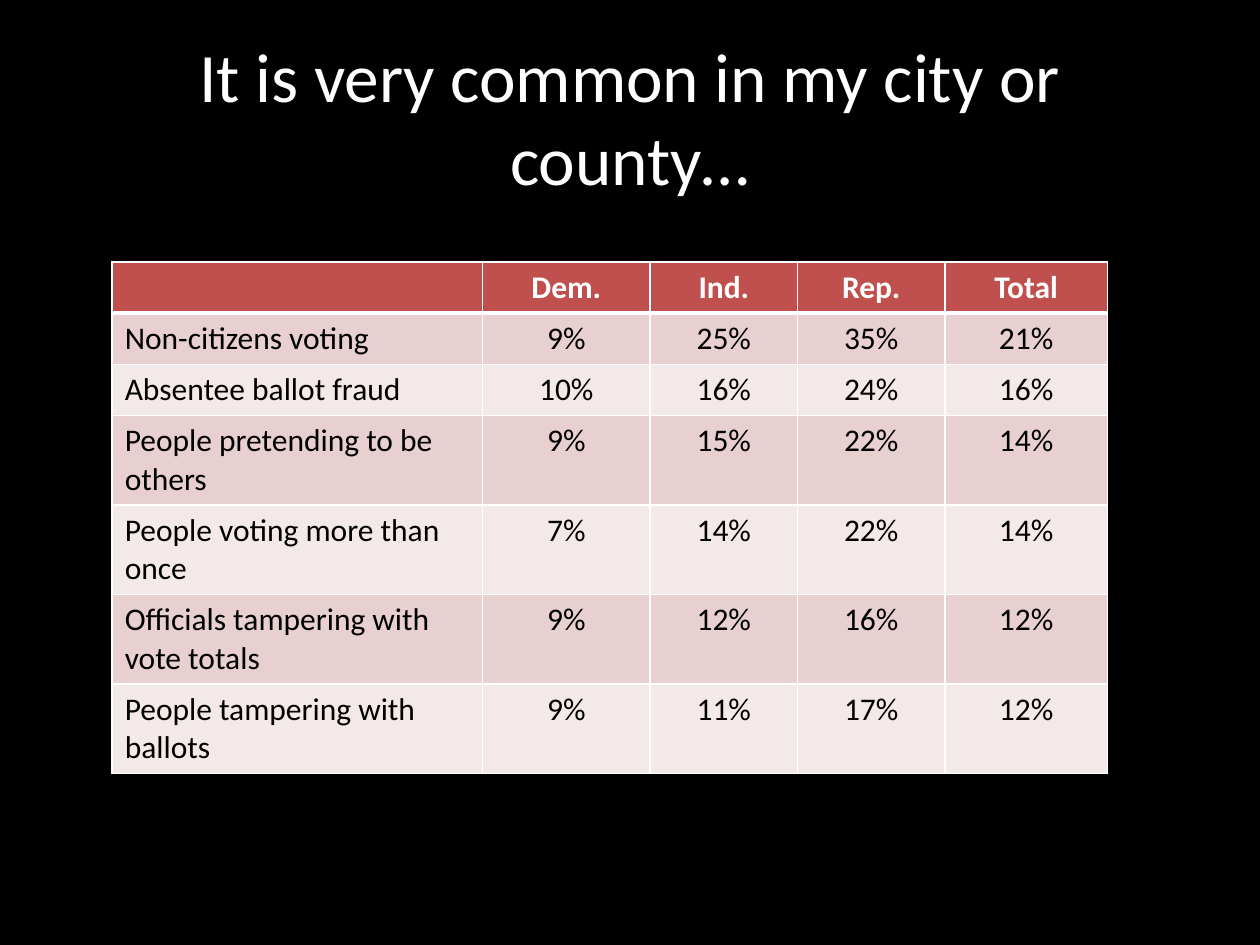
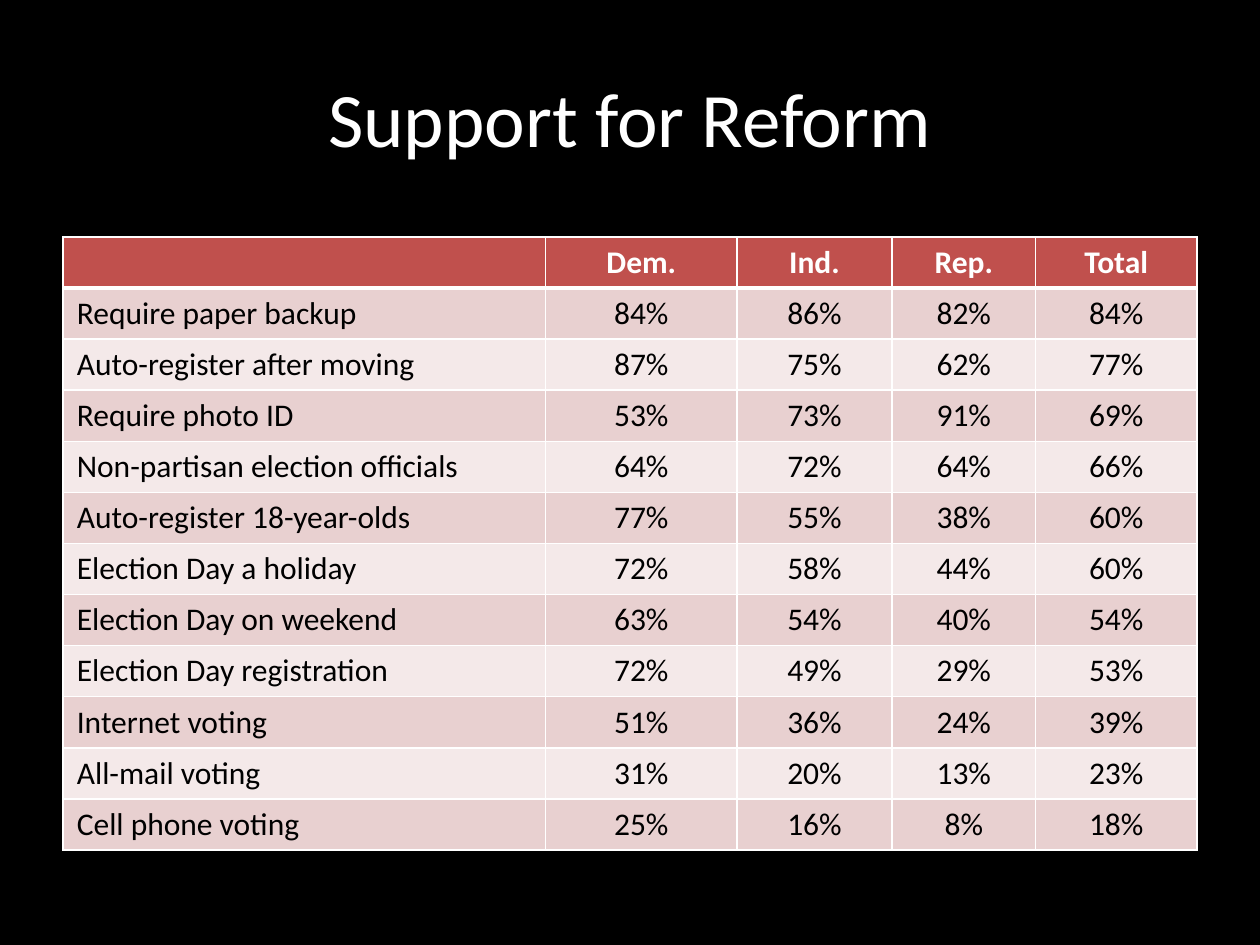
import dataclasses

import pptx
import pptx.dml.color
import pptx.enum.text
import pptx.oxml
import pptx.oxml.ns
import pptx.util

Inches = pptx.util.Inches
ALIGN = pptx.enum.text.PP_ALIGN
ANCHOR = pptx.enum.text.MSO_ANCHOR


@dataclasses.dataclass(frozen=True)
class Theme:
    font: str = "Calibri"
    background: str = "000000"
    light: str = "FFFFFF"
    dark: str = "000000"
    header: str = "C0504D"
    bands: tuple = ("E8D0D0", "F4E9E9")
    title_size: float = 44
    cell_size: float = 18
    border: float = 1
    header_rule: float = 3


def rgb(color):
    return pptx.dml.color.RGBColor.from_string(color)


class Deck:
    def __init__(self, theme):
        self.theme = theme
        self.prs = pptx.Presentation()
        self.prs.slide_width, self.prs.slide_height = Inches(10), Inches(7.5)
        self.slide = None

    def new_slide(self):
        self.slide = self.prs.slides.add_slide(self.prs.slide_layouts[5])
        fill = self.slide.background.fill
        fill.solid()
        fill.fore_color.rgb = rgb(self.theme.background)

    def add_text(self, tf, text, size, color, align, bold=False):
        p = tf.paragraphs[0]
        p.alignment = align
        if not text:
            return
        r = p.add_run()
        r.text = text
        style = {"name": self.theme.font, "size": pptx.util.Pt(size), "bold": bold}
        for name, value in style.items():
            setattr(r.font, name, value)
        r.font.color.rgb = rgb(color)

    def title(self, text, size=None):
        sp = self.slide.shapes.title
        place = {"left": 0.5, "top": 0.3, "width": 9, "height": 1.25}
        for name, value in place.items():
            setattr(sp, name, Inches(value))
        sp.text_frame.word_wrap = True
        sp.text_frame.vertical_anchor = ANCHOR.MIDDLE
        self.add_text(sp.text_frame, text, size or self.theme.title_size,
                      self.theme.light, ALIGN.CENTER)

    def borders(self, cell, row):
        widths = dict.fromkeys("LRTB", self.theme.border)
        # The thick rule lies between the header and the first body row
        if row < 2:
            widths["B" if row == 0 else "T"] = self.theme.header_rule
        tc_pr = cell._tc.get_or_add_tcPr()
        for side, width in widths.items():
            tc_pr.append(pptx.oxml.parse_xml(
                f'<a:ln{side} {pptx.oxml.ns.nsdecls("a")} w="{pptx.util.Pt(width)}">'
                f'<a:solidFill><a:srgbClr val="{self.theme.light}"/></a:solidFill>'
                f'</a:ln{side}>'))

    def table(self, left, top, height, widths, rows, inset=0.1):
        t = self.theme
        table = self.slide.shapes.add_table(
            len(rows), len(widths), Inches(left), Inches(top),
            Inches(sum(widths)), Inches(height)).table
        for column, width in zip(table.columns, widths):
            column.width = Inches(width)
        for i, row in enumerate(rows):
            head = i == 0
            for j, text in enumerate(row):
                cell = table.cell(i, j)
                self.borders(cell, i)
                cell.fill.solid()
                cell.fill.fore_color.rgb = rgb(t.header if head else t.bands[(i - 1) % 2])
                cell.margin_left = cell.margin_right = Inches(inset)
                self.add_text(cell.text_frame, text, t.cell_size,
                              t.light if head else t.dark,
                              ALIGN.CENTER if j else ALIGN.LEFT, bold=head)


def poll_rows(results):
    """Add the party header and percent signs to the poll results."""
    return [("", "Dem.", "Ind.", "Rep.", "Total")] + [
        (label, *(f"{share}%" for share in shares)) for label, *shares in results]


FRAUD_BELIEFS = [
    ("Non-citizens voting", 9, 25, 35, 21),
    ("Absentee ballot fraud", 10, 16, 24, 16),
    ("People pretending to be others", 9, 15, 22, 14),
    ("People voting more than once", 7, 14, 22, 14),
    ("Officials tampering with vote totals", 9, 12, 16, 12),
    ("People tampering with ballots", 9, 11, 17, 12),
]

REFORM_SUPPORT = [
    ("Require paper backup", 84, 86, 82, 84),
    ("Auto-register after moving", 87, 75, 62, 77),
    ("Require photo ID", 53, 73, 91, 69),
    ("Non-partisan election officials", 64, 72, 64, 66),
    ("Auto-register 18-year-olds", 77, 55, 38, 60),
    ("Election Day a holiday", 72, 58, 44, 60),
    ("Election Day on weekend", 63, 54, 40, 54),
    ("Election Day registration", 72, 49, 29, 53),
    ("Internet voting", 51, 36, 24, 39),
    ("All-mail voting", 31, 20, 13, 23),
    ("Cell phone voting", 25, 16, 8, 18),
]


def main():
    deck = Deck(Theme())

    # Beliefs about fraud; two-line labels make some rows taller
    deck.new_slide()
    deck.title("It is very common in my city or county…", size=39.6)
    deck.table(0.89, 2.08, 2.84, (2.94, 1.33, 1.17, 1.17, 1.29),
               poll_rows(FRAUD_BELIEFS))

    # Support for reform
    deck.new_slide()
    deck.title("Support for Reform")
    deck.table(0.5, 1.88, 4.87, (3.83, 1.52, 1.23, 1.14, 1.28),
               poll_rows(REFORM_SUPPORT), inset=0.11)

    deck.prs.save("out.pptx")


if __name__ == "__main__":
    main()
